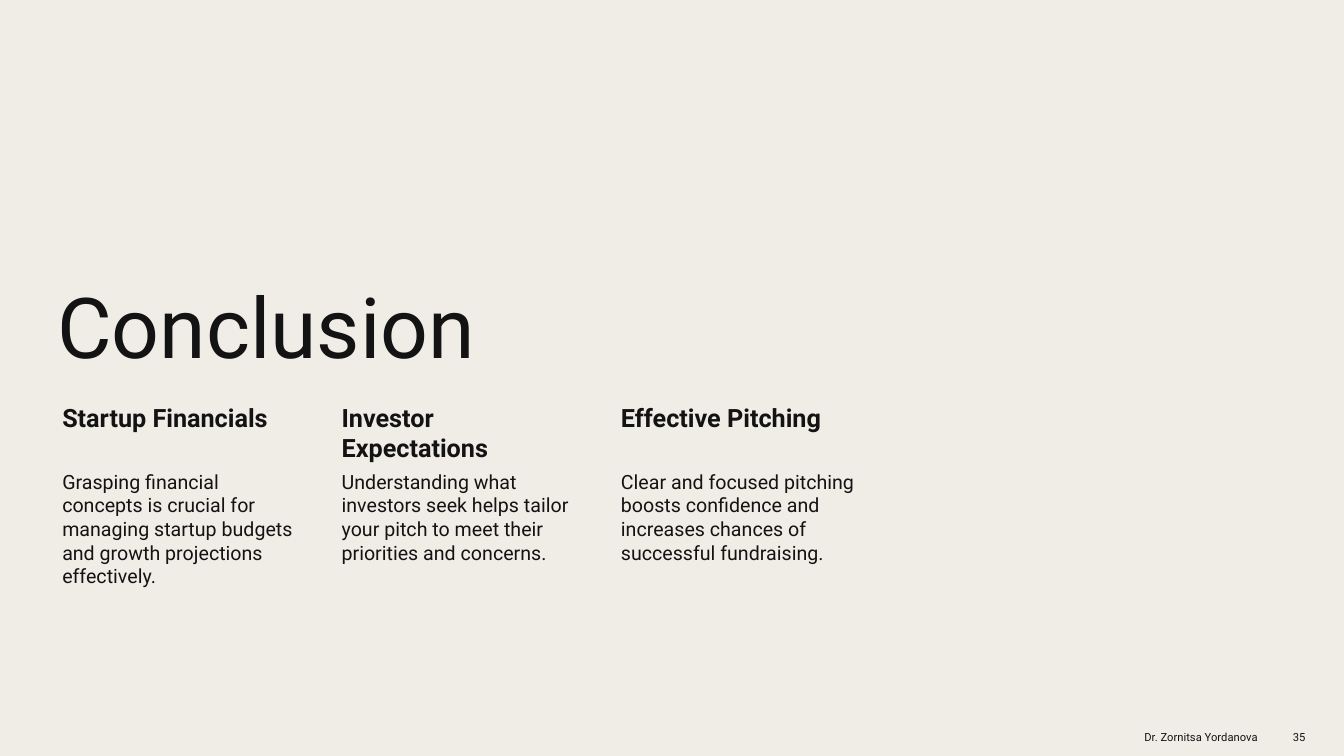
from pptx import Presentation
from pptx.dml.color import RGBColor
from pptx.enum import text
from pptx.util import Cm, Pt

COLORS = {"background": "F0EDE6", "ink": "131313"}
FONT = "Roboto"

TAKEAWAYS = [
    ("Startup Financials",
     "Grasping financial concepts is crucial for managing startup budgets "
     "and growth projections effectively."),
    ("Investor Expectations",
     "Understanding what investors seek helps tailor your pitch to meet "
     "their priorities and concerns."),
    ("Effective Pitching",
     "Clear and focused pitching boosts confidence and increases chances "
     "of successful fundraising."),
]


def write(frame, words, size, bold=False, align=text.PP_ALIGN.LEFT,
          anchor=text.MSO_ANCHOR.TOP):
    frame.word_wrap = True
    frame.auto_size = text.MSO_AUTO_SIZE.NONE
    frame.vertical_anchor = anchor
    frame.text = words
    paragraph = frame.paragraphs[0]
    paragraph.alignment = align
    paragraph.font.name = FONT
    paragraph.font.size = Pt(size)
    paragraph.font.bold = bold
    paragraph.font.color.rgb = RGBColor.from_string(COLORS["ink"])
    return paragraph


def add_title(slide, left, top, width, height):
    title = slide.shapes.title
    title.left, title.top, title.width, title.height = left, top, width, height
    heading = write(title.text_frame, "Conclusion", 60,
                    anchor=text.MSO_ANCHOR.BOTTOM)
    heading.line_spacing = 0.9


def add_takeaway(slide, left, top, width, height, heading, detail):
    heading_height = Cm(1.73)
    parts = [
        (heading, 18, True, top, heading_height, Cm(0.08)),
        (detail, 14, False, top + heading_height, height - heading_height, Cm(0.05)),
    ]
    for words, size, bold, part_top, part_height, inset in parts:
        frame = slide.shapes.add_textbox(left, part_top, width, part_height).text_frame
        frame.margin_left = Cm(0.38)
        frame.margin_top = frame.margin_right = frame.margin_bottom = inset
        write(frame, words, size, bold)


def add_takeaways(slide, left, top, width, height):
    gap = Cm(0.64)
    column_width = (width - gap * (len(TAKEAWAYS) - 1)) // len(TAKEAWAYS)
    for index, (heading, detail) in enumerate(TAKEAWAYS):
        add_takeaway(slide, left + index * (column_width + gap), top,
                     column_width, height, heading, detail)


def add_footer(slide, left, top, width, height):
    number_width = Cm(1.27)
    author_width = Cm(7.34)
    parts = [
        ("Dr. Zornitsa Yordanova", left, author_width),
        ("35", left + width - number_width, number_width),
    ]
    for words, part_left, part_width in parts:
        box = slide.shapes.add_textbox(part_left, top, part_width, height)
        write(box.text_frame, words, 8, align=text.PP_ALIGN.RIGHT,
              anchor=text.MSO_ANCHOR.MIDDLE)


def main():
    deck = Presentation()
    deck.slide_width, deck.slide_height = Cm(33.87), Cm(19.05)
    slide = deck.slides.add_slide(deck.slide_layouts[5])
    slide.background.fill.solid()
    slide.background.fill.fore_color.rgb = RGBColor.from_string(COLORS["background"])
    left, width = Cm(1.19), Cm(20.48)
    add_title(slide, left, Cm(4.52), width, Cm(5.11))
    add_takeaways(slide, left, Cm(10.06), width, Cm(6.2))
    add_footer(slide, Cm(24.61), Cm(18.11), Cm(8.54), Cm(0.94))
    deck.save("out.pptx")


if __name__ == "__main__":
    main()
